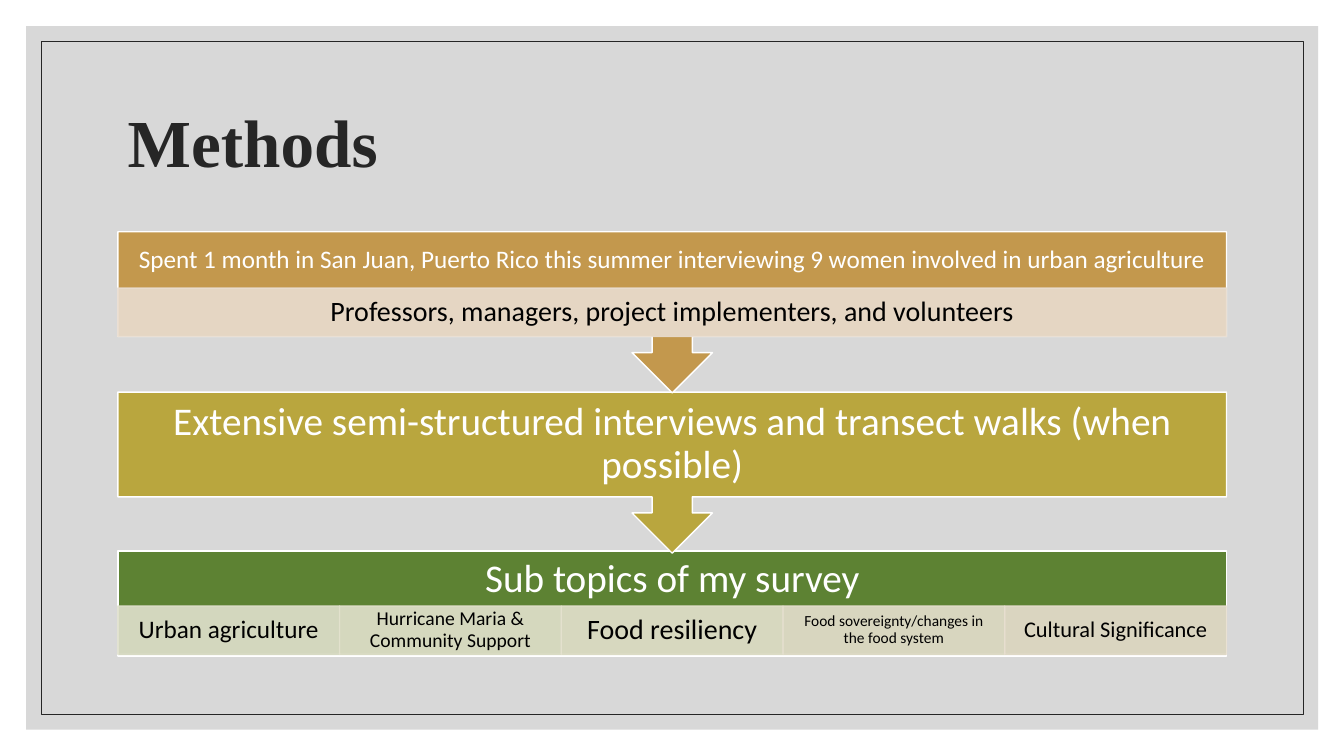
"""Build the Methods slide: three stacked steps joined by callout arrows."""
from lxml import etree
from pptx import Presentation
from pptx import util as u
from pptx.dml.color import RGBColor
from pptx.enum import shapes, text
from pptx.oxml import ns

WHITE = RGBColor(0xFF, 0xFF, 0xFF)
BLACK = RGBColor(0, 0, 0)
CHARCOAL = RGBColor(0x26, 0x26, 0x26)
PANEL_GRAY = RGBColor(0xBF, 0xBF, 0xBF)
TAN = RGBColor(0xC3, 0x98, 0x4D)
OLIVE = RGBColor(0xB9, 0xA6, 0x3E)
GREEN = RGBColor(0x5D, 0x82, 0x33)
PALE_TAN = RGBColor(0xE9, 0xDD, 0xD0)

LEFT, WIDTH = 2.97, 27.94
STEP_TOPS = (5.84, 9.88, 13.89)
BODY_HEIGHT, CALLOUT_HEIGHT = 2.64, 4.06
HEAD_HEIGHT, BAND_HEIGHT = 1.42, 1.22

TOPICS = (
    ("Urban agriculture", 18, 0.36, RGBColor(0xE0, 0xE1, 0xCE)),
    ("Hurricane Maria & Community Support", 14, 0.28, RGBColor(0xE3, 0xE2, 0xCE)),
    ("Food resiliency", 20, 0.41, RGBColor(0xE5, 0xE2, 0xCF)),
    ("Food sovereignty/changes in the food system", 11, 0.23, RGBColor(0xE6, 0xE0, 0xCF)),
    ("Cultural Significance", 16, 0.3, RGBColor(0xE8, 0xDF, 0xD0)),
)


class MethodsPage:
    """Holds the page and its style, and draws each kind of element."""

    body_font = "Calibri"
    title_font = "Times New Roman"

    def __init__(self, page):
        self.page = page

    def shape(self, kind, left, top, width, height, fill=None, line=None, weight=1, opacity=100):
        box = self.page.shapes.add_shape(kind, u.Cm(left), u.Cm(top), u.Cm(width), u.Cm(height))
        box.shadow.inherit = False
        for paint, color in ((box.fill, fill), (box.line.fill, line)):
            if color is None:
                paint.background()
            else:
                paint.solid()
                paint.fore_color.rgb = color
        if line is not None:
            box.line.width = u.Pt(weight)
        if opacity < 100:
            for color in box.element.spPr.iter(ns.qn("a:srgbClr")):
                etree.SubElement(color, ns.qn("a:alpha"), val=str(opacity * 1000))
        return box

    def rectangle(self, *place, **style):
        return self.shape(shapes.MSO_SHAPE.RECTANGLE, *place, **style)

    def set_words(self, box, words, size, color, inset, font=None, bold=False,
                  align=text.PP_ALIGN.CENTER):
        frame = box.text_frame
        frame.word_wrap = True
        frame.vertical_anchor = text.MSO_ANCHOR.MIDDLE
        frame.margin_left = frame.margin_right = u.Cm(inset)
        frame.margin_top = frame.margin_bottom = 0
        para = frame.paragraphs[0]
        para.text = words
        para.alignment = align
        para.line_spacing = 0.9
        para.font.name = font or self.body_font
        para.font.size = u.Pt(size)
        para.font.bold = bold
        para.font.color.rgb = color

    def label(self, top, height, words, size, color, inset, **style):
        box = self.page.shapes.add_textbox(u.Cm(LEFT), u.Cm(top), u.Cm(WIDTH), u.Cm(height))
        self.set_words(box, words, size, color, inset, **style)

    def title(self, words):
        self.label(1.78, 3.81, words, 48, CHARCOAL, 0.25, font=self.title_font,
                   bold=True, align=text.PP_ALIGN.LEFT)

    def band(self, left, top, width, words, size, inset, tint):
        box = self.rectangle(left, top, width, BAND_HEIGHT, fill=tint, line=tint, opacity=90)
        self.set_words(box, words, size, BLACK, inset)

    def callout(self, top, fill):
        arrow = self.shape(shapes.MSO_SHAPE.UP_ARROW_CALLOUT, LEFT, top, WIDTH,
                           CALLOUT_HEIGHT, fill=fill, line=WHITE)
        arrow.rotation = 180


def main():
    deck = Presentation()
    deck.slide_width, deck.slide_height = u.Cm(33.87), u.Cm(19.05)
    methods = MethodsPage(deck.slides.add_slide(deck.slide_layouts[6]))
    people_top, interview_top, topics_top = STEP_TOPS

    methods.rectangle(0.66, 0.66, 32.56, 17.73, fill=PANEL_GRAY, opacity=60)
    methods.rectangle(1.04, 1.04, 31.8, 16.97, line=CHARCOAL, weight=0.5)
    methods.title("Methods")

    methods.rectangle(LEFT, topics_top, WIDTH, BODY_HEIGHT, fill=GREEN, line=WHITE)
    methods.label(topics_top, HEAD_HEIGHT, "Sub topics of my survey", 28, WHITE, 0.56)
    topic_width = WIDTH / len(TOPICS)
    for column, (words, size, inset, tint) in enumerate(TOPICS):
        methods.band(LEFT + column * topic_width, 15.27, topic_width, words, size, inset, tint)

    methods.callout(interview_top, OLIVE)
    methods.label(interview_top, BODY_HEIGHT,
                  "Extensive semi-structured interviews and transect walks (when possible)",
                  28, WHITE, 0.56)

    methods.callout(people_top, TAN)
    methods.label(people_top, HEAD_HEIGHT,
                  "Spent 1 month in San Juan, Puerto Rico this summer interviewing 9 women "
                  "involved in urban agriculture", 18, WHITE, 0.36)
    methods.band(LEFT, people_top + HEAD_HEIGHT, WIDTH,
                 "Professors, managers, project implementers, and volunteers",
                 20, 0.41, PALE_TAN)

    deck.save("out.pptx")


if __name__ == "__main__":
    main()
